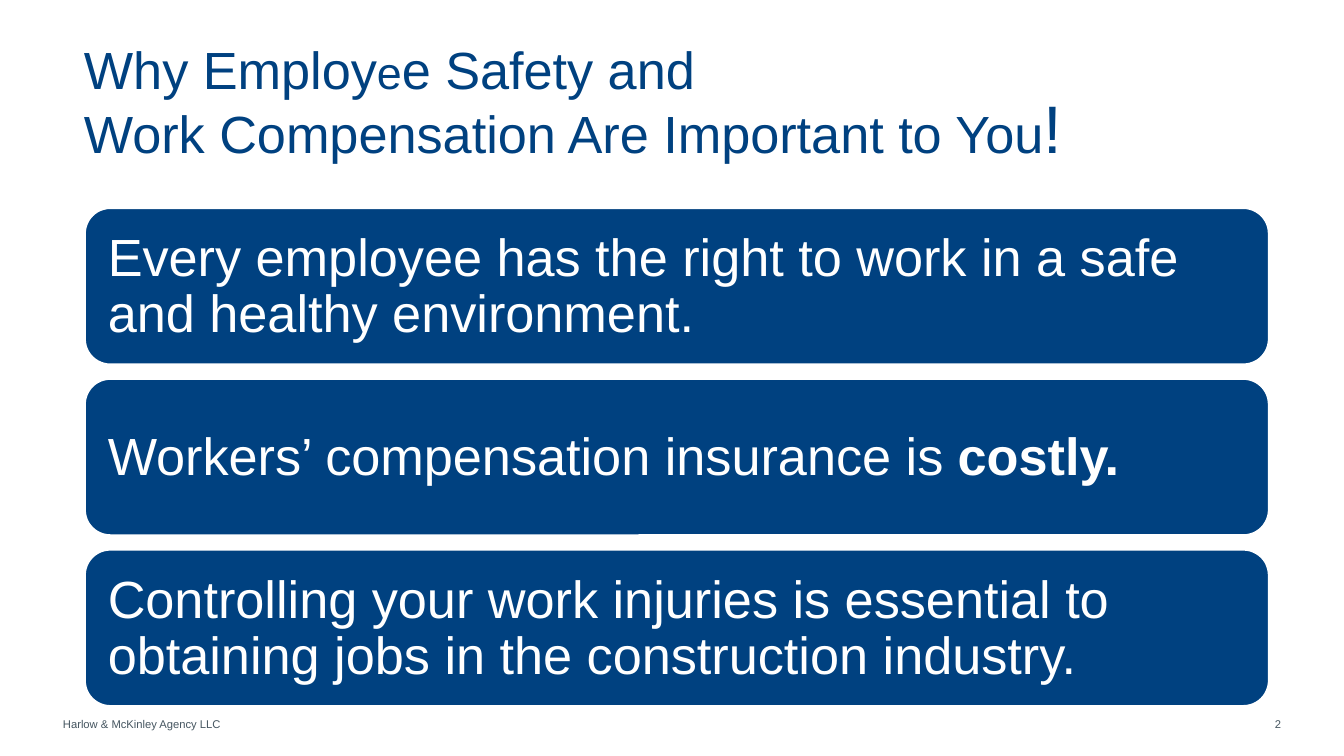
from dataclasses import dataclass, field
from typing import Any

from pptx import Presentation
from pptx import util as u
from pptx.dml.color import RGBColor
from pptx.enum import shapes, text

PX = 9525
NAVY, WHITE, SLATE = "004180", "FFFFFF", "455560"


@dataclass
class Run:
    text: str
    format: dict[str, Any] = field(default_factory=dict)


@dataclass
class Label:
    box: tuple[int, int, int, int]
    runs: list[Run]
    size: int
    color: str
    margin: int = 0
    frame: dict[str, Any] = field(default_factory=dict)
    paragraph: dict[str, Any] = field(default_factory=dict)


def px(value: int) -> u.Emu:
    return u.Emu(value * PX)


def rgb(value: str) -> RGBColor:
    return RGBColor.from_string(value)


def apply(target: Any, values: dict[str, Any]) -> None:
    for name, value in values.items():
        setattr(target, name, value)


def draw_label(slide: Any, label: Label) -> None:
    frame = slide.shapes.add_textbox(*map(px, label.box)).text_frame
    sides = ("left", "top", "right", "bottom")
    apply(frame, {f"margin_{side}": px(label.margin) for side in sides})
    apply(frame, {"word_wrap": True} | label.frame)
    paragraph = frame.paragraphs[0]
    apply(paragraph, label.paragraph)
    for item in label.runs:
        for index, line in enumerate(item.text.split("\n")):
            if index:
                paragraph.add_line_break()
            run = paragraph.add_run()
            run.text = line
            apply(run.font, {"name": "Arial", "size": u.Pt(label.size)} | item.format)
            run.font.color.rgb = rgb(label.color)


def draw_card(slide: Any, top: int, runs: list[Run]) -> None:
    shape = slide.shapes.add_shape(
        shapes.MSO_SHAPE.ROUNDED_RECTANGLE, *map(px, (60, top, 847, 113))
    )
    shape.shadow.inherit = False
    shape.fill.solid()
    shape.fill.fore_color.rgb = rgb(NAVY)
    shape.line.color.rgb = rgb(WHITE)
    shape.line.width = u.Pt(2)
    draw_label(slide, Label(
        (66, top + 6, 836, 103), runs, 28, WHITE, 11,
        {"vertical_anchor": text.MSO_ANCHOR.MIDDLE}, {"line_spacing": 0.9},
    ))


def main() -> None:
    presentation = Presentation()
    apply(presentation, {"slide_width": px(960), "slide_height": px(540)})
    slide = presentation.slides.add_slide(presentation.slide_layouts[6])

    title = [
        Run("Why Employ"),
        Run("e", {"size": u.Pt(24)}),
        Run("e Safety and \nWork Compensation Are Important to You"),
        Run("!", {"size": u.Pt(36)}),
    ]
    cards = [
        [Run("Every employee has the right to work in a safe and healthy environment.")],
        [Run("Workers’ compensation insurance is "), Run("costly.", {"bold": True})],
        [Run("Controlling your work injuries is essential to obtaining jobs "
             "in the construction industry.")],
    ]

    draw_label(slide, Label(
        (45, 514, 289, 8), [Run("Harlow & McKinley Agency LLC")], 6, SLATE,
        frame={"vertical_anchor": text.MSO_ANCHOR.BOTTOM, "word_wrap": False},
    ))
    draw_label(slide, Label(
        (60, 34, 847, 55), title, 28, NAVY,
        frame={"word_wrap": False}, paragraph={"line_spacing": 0.83},
    ))
    for index, runs in enumerate(cards):
        draw_card(slide, 148 + index * 122, runs)
    draw_label(slide, Label(
        (895, 512, 20, 10), [Run("2")], 6, SLATE,
        frame={"auto_size": text.MSO_AUTO_SIZE.SHAPE_TO_FIT_TEXT},
        paragraph={"alignment": text.PP_ALIGN.RIGHT},
    ))

    presentation.save("out.pptx")


if __name__ == "__main__":
    main()
